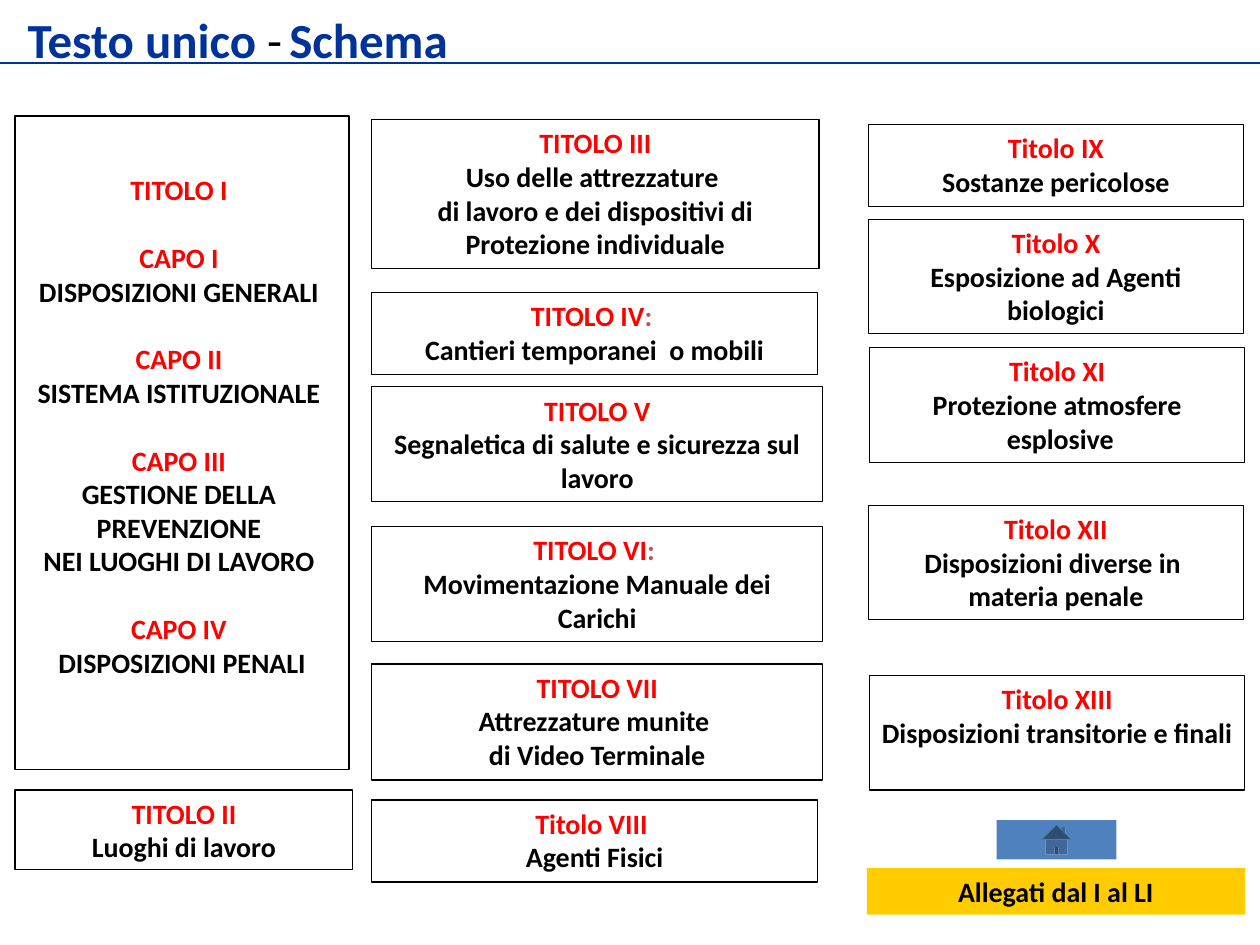
from collections import namedtuple
from pptx import Presentation
from pptx.dml.color import RGBColor
from pptx.enum.shapes import MSO_CONNECTOR, MSO_SHAPE
from pptx.enum.text import MSO_ANCHOR, PP_ALIGN
from pptx.oxml.ns import qn
from pptx.util import Inches, Pt
from lxml.etree import SubElement

WIDTH, HEIGHT = Inches(10), Inches(7.5)
COLUMNS, ROWS = 100, 75
RED, BLACK, WHITE, BLUE = "FF0000", "000000", "FFFFFF", "003399"
BROWN, YELLOW, STEEL = "C0504D", "FFCC00", "4F81BD"
HEADING = {"name": "Calibri", "size": Pt(16), "bold": True, "color": RED}
BODY = {**HEADING, "color": BLACK}
COLON = {**HEADING, "color": BROWN}
TITLE = {**HEADING, "size": Pt(28), "color": BLUE}
DASH = {**TITLE, "bold": False, "color": BLACK}
SPACE = {**DASH, "size": Pt(18)}

Box = namedtuple("Box", "left top width height")
Card = namedtuple("Card", "left top width height heading body")

GENERAL = [
    ("TITOLO I ", []),
    ("CAPO I ", ["DISPOSIZIONI GENERALI "]),
    ("CAPO II ", ["SISTEMA ISTITUZIONALE "]),
    ("CAPO III ", ["GESTIONE DELLA ", "PREVENZIONE ", "NEI LUOGHI DI LAVORO "]),
    ("CAPO IV ", ["DISPOSIZIONI PENALI"]),
]
PLACES = [Card(0, 0, 26.8, 6.3, "TITOLO II", ["Luoghi di lavoro"])]
MIDDLE = [
    Card(0, 0, 35.5, 11.8, "TITOLO III",
         ["Uso delle attrezzature ",
          "di lavoro e dei dispositivi di Protezione individuale"]),
    Card(0, 13.7, 35.4, 6.5, "TITOLO IV: ", ["Cantieri temporanei  o mobili"]),
    Card(0, 21.2, 35.8, 9.1, "TITOLO V",
         ["Segnaletica di salute e sicurezza sul lavoro"]),
    Card(0, 32.3, 35.8, 9.1, "TITOLO VI: ", ["Movimentazione Manuale dei Carichi"]),
    Card(0, 43.2, 35.8, 9.2, "TITOLO VII",
         ["Attrezzature munite ", "di Video Terminale"]),
    Card(0, 54, 35.4, 6.5, "Titolo VIII ", ["Agenti Fisici"]),
]
RIGHT = [
    Card(0, 0, 29.8, 6.5, "Titolo IX", ["Sostanze pericolose"]),
    Card(0, 7.5, 29.8, 9.1, "Titolo X", ["Esposizione ad Agenti biologici"]),
    Card(0.1, 17.7, 29.8, 9.1, "Titolo XI", ["Protezione atmosfere", " esplosive"]),
    Card(0, 30.2, 29.8, 9.1, "Titolo XII",
         ["Disposizioni diverse in ", "materia penale"]),
    Card(0.1, 43.7, 29.8, 9.1, "Titolo XIII", ["Disposizioni transitorie e finali"]),
]


def color(value):
    return RGBColor.from_string(value)


def across(columns):
    return round(WIDTH * columns / COLUMNS)


def down(rows):
    return round(HEIGHT * rows / ROWS)


def measures(box):
    return across(box.left), down(box.top), across(box.width), down(box.height)


def inside(box, part):
    return Box(box.left + part.left, box.top + part.top, part.width, part.height)


def add_span(para, text, formats):
    span = para.add_run()
    span.text = text
    for name, value in formats.items():
        if name == "color":
            span.font.color.rgb = color(value)
        else:
            setattr(span.font, name, value)


def write_lines(frame, lines):
    for index, spans in enumerate(lines):
        para = frame.paragraphs[0] if index == 0 else frame.add_paragraph()
        para.alignment = PP_ALIGN.CENTER
        for text, formats in spans:
            add_span(para, text, formats)


def add_panel(page, box, fill, line=None, kind=MSO_SHAPE.RECTANGLE):
    panel = page.shapes.add_shape(kind, *measures(box))
    panel.shadow.inherit = False
    panel.fill.solid()
    panel.fill.fore_color.rgb = color(fill)
    if line:
        panel.line.color.rgb = color(line)
        panel.line.width = Pt(0.75)
    else:
        panel.line.fill.background()
    panel.text_frame.word_wrap = True
    return panel


def heading_spans(heading):
    name, colon, rest = heading.partition(":")
    spans = [(name, HEADING)]
    if colon:
        spans.append((colon + rest, COLON))
    return spans


def draw_title(page, box):
    rule = page.shapes.add_connector(
        MSO_CONNECTOR.STRAIGHT, 0, down(box.top + 4.7), WIDTH, down(box.top + 4.7))
    rule.line.color.rgb = color(BLUE)
    rule.line.width = Pt(1)
    SubElement(rule._element.spPr, qn("a:effectLst"))
    frame = page.shapes.add_textbox(*measures(box)).text_frame
    frame.word_wrap = False
    for text, formats in [("Testo unico", TITLE), (" -", DASH),
                          (" ", SPACE), ("Schema", TITLE)]:
        add_span(frame.paragraphs[0], text, formats)


def draw_general(page, box):
    frame = add_panel(page, box, WHITE, BLACK).text_frame
    frame.vertical_anchor = MSO_ANCHOR.MIDDLE
    frame.margin_bottom = down(3.2)
    lines = []
    for heading, body in GENERAL:
        lines.append([(heading, HEADING)])
        lines.extend([(text, BODY)] for text in body)
    write_lines(frame, lines)
    for para in frame.paragraphs[1:]:
        if para.text.startswith("CAPO"):
            para.space_before = Pt(19.5)


def draw_cards(page, box, cards, anchor=MSO_ANCHOR.TOP):
    for card in cards:
        frame = add_panel(page, inside(box, card), WHITE, BLACK).text_frame
        frame.vertical_anchor = anchor
        write_lines(frame, [heading_spans(card.heading)]
                    + [[(text, BODY)] for text in card.body])


def draw_annexes(page, box):
    add_panel(page, inside(box, Box(10.3, 0, 9.5, 3.1)), STEEL,
              kind=MSO_SHAPE.ACTION_BUTTON_HOME)
    banner = add_panel(page, inside(box, Box(0, 3.8, box.width, 3.7)), YELLOW)
    banner.text_frame.vertical_anchor = MSO_ANCHOR.TOP
    write_lines(banner.text_frame, [[("Allegati dal I al LI", BODY)]])


def main():
    deck = Presentation()
    deck.slide_width, deck.slide_height = WIDTH, HEIGHT
    page = deck.slides.add_slide(deck.slide_layouts[6])
    draw_general(page, Box(1.2, 9.2, 26.5, 51.9))
    draw_cards(page, Box(1.2, 62.7, 26.8, 6.3), PLACES, MSO_ANCHOR.MIDDLE)
    draw_cards(page, Box(29.5, 9.5, 35.8, 60.5), MIDDLE)
    draw_cards(page, Box(68.9, 9.9, 29.9, 52.8), RIGHT)
    draw_annexes(page, Box(68.8, 65.1, 30, 7.5))
    draw_title(page, Box(1.2, 0.3, 37.1, 5.7))
    deck.save("out.pptx")


if __name__ == "__main__":
    main()
